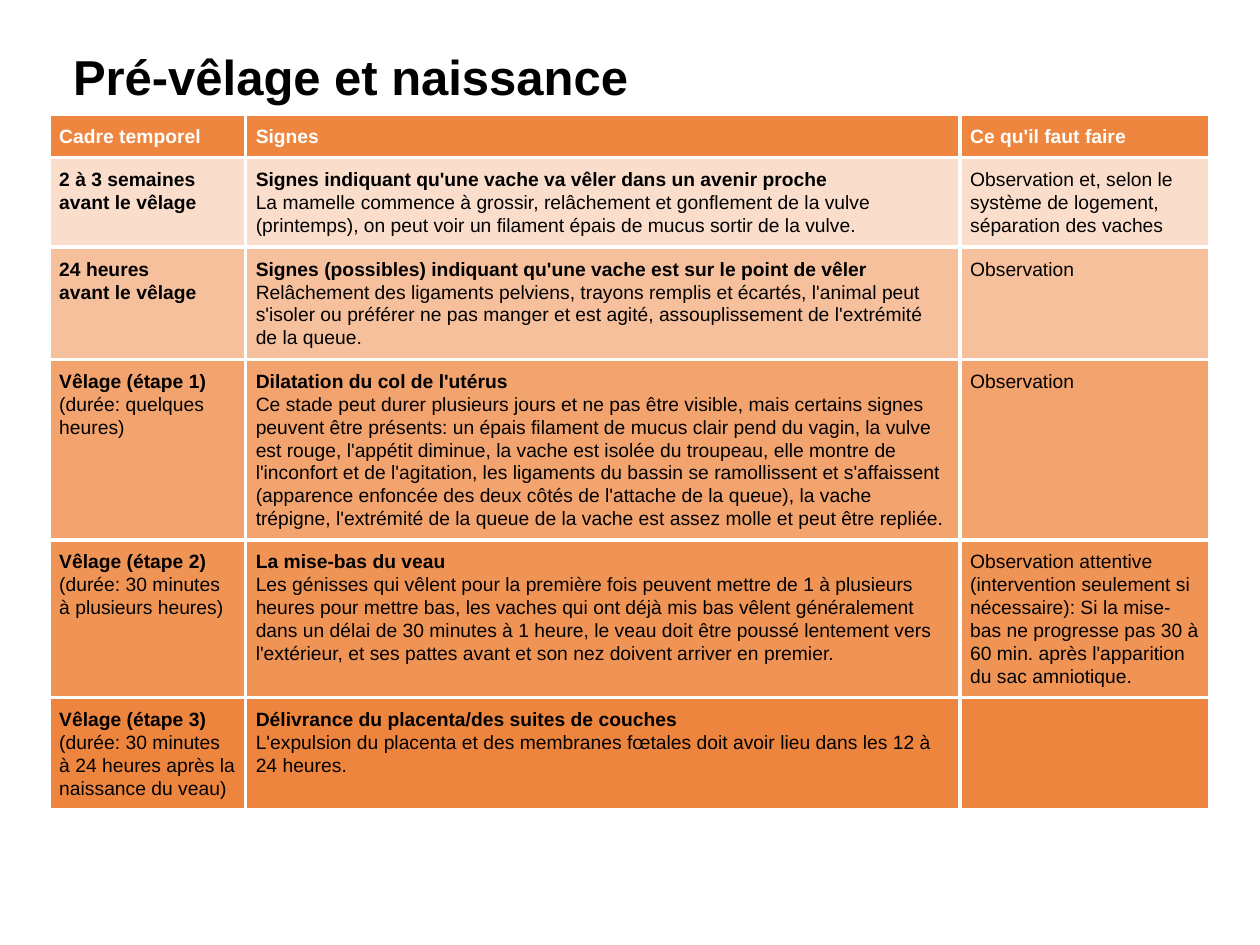
from lxml.etree import SubElement
from pptx import Presentation
from pptx.dml.color import RGBColor
from pptx.enum.text import MSO_ANCHOR, PP_ALIGN
from pptx.oxml.ns import qn
from pptx.util import Inches, Pt

BLACK = RGBColor(0x00, 0x00, 0x00)
WHITE = RGBColor(0xFF, 0xFF, 0xFF)
FILLS = [RGBColor.from_string(tone) for tone in
         ("EE8640", "FADDCA", "F6C09C", "F2A36E", "F09456", "EE853E")]
COLS = (1.56, 5.67, 1.98)
ROWS = (0.34, 0.71, 0.89, 1.43, 1.25, 0.87)
PAD = Inches(0.08)
INSETS = {"margin_left": PAD, "margin_right": PAD, "margin_top": PAD, "margin_bottom": PAD}

# Each cell lists its paragraphs as (bold text, plain text).
CELLS = (
    ([("Cadre temporel", "")], [("Signes", "")], [("Ce qu'il faut faire", "")]),
    ([("2 à 3 semaines \navant le vêlage", "")],
     [("Signes indiquant qu'une vache va vêler dans un avenir proche", ""),
      ("", "La mamelle commence à grossir, relâchement et gonflement de la vulve "
           "(printemps), on peut voir un filament épais de mucus sortir de la vulve.")],
     [("", "Observation et, selon le système de logement, séparation des vaches")]),
    ([("24 heures \navant le vêlage", "")],
     [("Signes (possibles) indiquant qu'une vache est sur le point de vêler", ""),
      ("", "Relâchement des ligaments pelviens, trayons remplis et écartés, l'animal peut "
           "s'isoler ou préférer ne pas manger et est agité, assouplissement de "
           "l'extrémité de la queue.")],
     [("", "Observation")]),
    ([("Vêlage (étape 1) ", "(durée: quelques heures)")],
     [("Dilatation du col de l'utérus", ""),
      ("", "Ce stade peut durer plusieurs jours et ne pas être visible, mais certains "
           "signes peuvent être présents: un épais filament de mucus clair pend du vagin, "
           "la vulve est rouge, l'appétit diminue, la vache est isolée du troupeau, elle "
           "montre de l'inconfort et de l'agitation, les ligaments du bassin se "
           "ramollissent et s'affaissent (apparence enfoncée des deux côtés de l'attache "
           "de la queue), la vache trépigne, l'extrémité de la queue de la vache est assez "
           "molle et peut être repliée.")],
     [("", "Observation")]),
    ([("Vêlage (étape 2) ", "(durée: 30 minutes \nà plusieurs heures)")],
     [("La mise-bas du veau", ""),
      ("", "Les génisses qui vêlent pour la première fois peuvent mettre de 1 à plusieurs "
           "heures pour mettre bas, les vaches qui ont déjà mis bas vêlent généralement "
           "dans un délai de 30 minutes à 1 heure, le veau doit être poussé lentement vers "
           "l'extérieur, et ses pattes avant et son nez doivent arriver en premier.")],
     [("", "Observation attentive (intervention seulement si nécessaire): Si la mise-bas "
           "ne progresse pas 30 à 60 min. après l'apparition du sac amniotique.")]),
    ([("Vêlage (étape 3)", ""),
      ("", "(durée: 30 minutes \nà 24 heures après la naissance du veau)")],
     [("Délivrance du placenta/des suites de couches", ""),
      ("", "L'expulsion du placenta et des membranes fœtales doit avoir lieu dans les 12 à "
           "24 heures.")],
     []),
)


def apply(item, values):
    """Set each named attribute on an item."""
    for name, value in values.items():
        setattr(item, name, value)


def add_run(para, text, size, color, bold):
    """Add text to a paragraph, with a line break at each newline."""
    for num, line in enumerate(text.split("\n")):
        if num:
            para.add_line_break()
        run = para.add_run()
        run.text = line
        apply(run.font, {"name": "Arial", "size": Pt(size), "bold": bold})
        run.font.color.rgb = color


def add_title(slide, text):
    """Place and fill the title."""
    title = slide.shapes.title
    apply(title, {"left": Inches(0.58), "top": Inches(0.25),
                  "width": Inches(9.02), "height": Inches(0.76)})
    frame = title.text_frame
    apply(frame, {"margin_left": 0, "margin_top": 0, "margin_right": Inches(0.1),
                  "margin_bottom": Inches(0.05), "word_wrap": True,
                  "vertical_anchor": MSO_ANCHOR.MIDDLE})
    para = frame.paragraphs[0]
    para.alignment = PP_ALIGN.LEFT
    add_run(para, text, 28, BLACK, True)


def add_edges(cell):
    """Draw white borders on all sides of a cell."""
    props = cell._tc.get_or_add_tcPr()
    for side in ("lnL", "lnR", "lnT", "lnB"):
        line = SubElement(props, qn(f"a:{side}"), w=str(Pt(2.25)))
        fill = SubElement(line, qn("a:solidFill"))
        SubElement(fill, qn("a:srgbClr"), val=str(WHITE))


def fill_cell(cell, paras, fill, color):
    """Format one cell and write its paragraphs."""
    apply(cell, INSETS)
    add_edges(cell)
    cell.fill.solid()
    cell.fill.fore_color.rgb = fill
    frame = cell.text_frame
    for num, (bold, plain) in enumerate(paras):
        para = frame.add_paragraph() if num else frame.paragraphs[0]
        para.line_spacing = 1.07
        for text, heavy in ((bold, True), (plain, False)):
            if text:
                add_run(para, text, 11, color, heavy)


def add_grid(slide):
    """Add the table of calving stages."""
    table = slide.shapes.add_table(
        len(ROWS), len(COLS), Inches(0.39), Inches(0.91),
        Inches(sum(COLS)), Inches(sum(ROWS))).table
    for col, width in zip(table.columns, COLS):
        col.width = Inches(width)
    for row, height, cells, fill in zip(table.rows, ROWS, CELLS, FILLS):
        row.height = Inches(height)
        color = WHITE if cells is CELLS[0] else BLACK
        for cell, paras in zip(row.cells, cells):
            fill_cell(cell, paras, fill, color)


def main():
    """Build and save the slide."""
    deck = Presentation()
    apply(deck, {"slide_width": Inches(10), "slide_height": Inches(7.5)})
    slide = deck.slides.add_slide(deck.slide_layouts[5])
    add_title(slide, "Pré-vêlage et naissance")
    add_grid(slide)
    deck.save("out.pptx")


if __name__ == "__main__":
    main()
